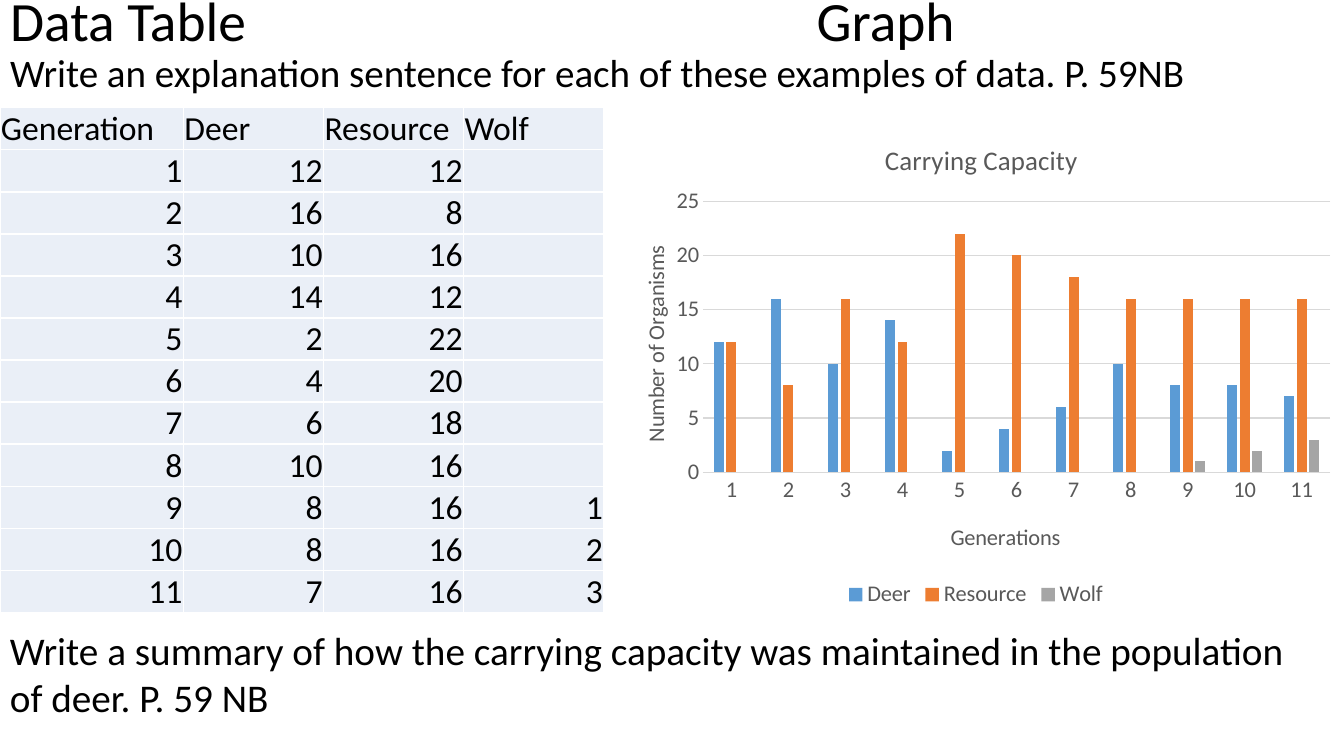
from lxml import etree
from pptx import Presentation
from pptx.chart.data import CategoryChartData
from pptx.dml.color import RGBColor
from pptx.enum.chart import XL_CHART_TYPE, XL_LEGEND_POSITION, XL_TICK_MARK
from pptx.enum.text import MSO_ANCHOR, MSO_AUTO_SIZE, PP_ALIGN
from pptx.oxml.ns import qn
from pptx.util import Inches, Pt

CLUSTERED = XL_CHART_TYPE.COLUMN_CLUSTERED
BOTTOM_LEGEND = XL_LEGEND_POSITION.BOTTOM
NO_TICKS = XL_TICK_MARK.NONE
MIDDLE, BOTTOM = MSO_ANCHOR.MIDDLE, MSO_ANCHOR.BOTTOM
LEFT, RIGHT = PP_ALIGN.LEFT, PP_ALIGN.RIGHT
NO_FIT = MSO_AUTO_SIZE.NONE

FONT = "Calibri"
BLACK, GREY, PALE_GREY, CELL_FILL = "000000", "595959", "D9D9D9", "EAEFF7"

HEADINGS = "Data Table\tGraph"
INSTRUCTION = "Write an explanation sentence for each of these examples of data. P. 59NB"
SUMMARY = ("Write a summary of how the carrying capacity was maintained "
           "in the population of deer. P. 59 NB")
GENERATIONS = [str(number) for number in range(1, 12)]
ORGANISMS = {
    "Deer": ("5B9BD5", [12, 16, 10, 14, 2, 4, 6, 10, 8, 8, 7]),
    "Resource": ("ED7D31", [12, 8, 16, 12, 22, 20, 18, 16, 16, 16, 16]),
    "Wolf": ("A5A5A5", [None] * 8 + [1, 2, 3]),
}
COLUMN_WIDTHS = [1.82, 1.39, 1.39, 1.39]
ROW_HEIGHT = 0.41
CELL_FORMAT = {"margin_left": Inches(0.01), "margin_right": Inches(0.01),
               "margin_top": Inches(0.01), "margin_bottom": 0,
               "vertical_anchor": BOTTOM}
PLOT_LAYOUT = {"layoutTarget": "inner", "xMode": "edge", "yMode": "edge",
               "x": 0.13, "y": 0.18, "w": 0.85, "h": 0.54}


def color(value):
    return RGBColor.from_string(value)


def set_attributes(target, values):
    for name, value in values.items():
        setattr(target, name, value)


def style_font(font, size, value):
    set_attributes(font, {"name": FONT, "size": Pt(size), "bold": False})
    font.color.rgb = color(value)


def add_run(paragraph, text, size):
    run = paragraph.add_run()
    run.text = text
    style_font(run.font, size, BLACK)


def set_layout(element, position, values):
    for previous in element.findall(qn("c:layout")):
        element.remove(previous)
    layout = etree.Element(qn("c:layout"))
    manual = etree.SubElement(layout, qn("c:manualLayout"))
    for name, value in values.items():
        etree.SubElement(manual, qn("c:" + name)).set("val", str(value))
    element.insert(position, layout)


def add_chart_title(owner, text, size, x, y):
    owner.has_title = True
    title = owner.chart_title if hasattr(owner, "chart_title") else owner.axis_title
    title.text_frame.text = text
    style_font(title.text_frame.paragraphs[0].runs[0].font, size, GREY)
    set_layout(title._element, 1, {"xMode": "edge", "yMode": "edge", "x": x, "y": y})


def add_title(slide):
    title = slide.shapes.title
    set_attributes(title, {"left": 0, "top": 0, "width": Inches(13.33), "height": Inches(0.89)})
    set_attributes(title.text_frame, {"word_wrap": True, "auto_size": NO_FIT,
                                      "vertical_anchor": MIDDLE})
    paragraph = title.text_frame.paragraphs[0]
    set_attributes(paragraph, {"alignment": LEFT, "line_spacing": 0.9})
    tab_list = etree.SubElement(paragraph._p.get_or_add_pPr(), qn("a:tabLst"))
    tab_stop = etree.SubElement(tab_list, qn("a:tab"))
    tab_stop.set("pos", str(Inches(8)))
    tab_stop.set("algn", "l")
    add_run(paragraph, HEADINGS, 39.6)
    paragraph.add_line_break()
    add_run(paragraph, INSTRUCTION, 27.9)


def add_data_table(slide):
    columns = [values for _, values in ORGANISMS.values()]
    rows = [("Generation", *ORGANISMS), *zip(GENERATIONS, *columns)]
    table = slide.shapes.add_table(
        len(rows), len(COLUMN_WIDTHS), 0, Inches(1.07),
        Inches(sum(COLUMN_WIDTHS)), Inches(ROW_HEIGHT * len(rows))).table
    set_attributes(table, {"first_row": False, "horz_banding": False})
    for column, width in zip(table.columns, COLUMN_WIDTHS):
        column.width = Inches(width)
    for row_index, row in enumerate(rows):
        for column_index, value in enumerate(row):
            cell = table.cell(row_index, column_index)
            set_attributes(cell, CELL_FORMAT)
            cell.fill.solid()
            cell.fill.fore_color.rgb = color(CELL_FILL)
            if value is not None:
                paragraph = cell.text_frame.paragraphs[0]
                paragraph.alignment = RIGHT if row_index else LEFT
                add_run(paragraph, str(value), 24)


def add_capacity_chart(slide):
    data = CategoryChartData()
    data.categories = GENERATIONS
    for name, (_, values) in ORGANISMS.items():
        data.add_series(name, values)
    chart = slide.shapes.add_chart(
        CLUSTERED, Inches(6.02), Inches(1.1), Inches(7.32), Inches(4.98), data).chart
    style_font(chart.font, 16, BLACK)
    add_chart_title(chart, "Carrying Capacity", 19.2, 0.37, 0.05)
    add_chart_title(chart.category_axis, "Generations", 16, 0.46, 0.81)
    add_chart_title(chart.value_axis, "Number of Organisms", 16, 0.04, 0.26)

    plot = chart.plots[0]
    set_attributes(plot, {"gap_width": 219, "overlap": -27, "vary_by_categories": False})
    for series, (fill, _) in zip(plot.series, ORGANISMS.values()):
        series.format.fill.solid()
        series.format.fill.fore_color.rgb = color(fill)

    for axis in (chart.category_axis, chart.value_axis):
        set_attributes(axis, {"major_tick_mark": NO_TICKS, "minor_tick_mark": NO_TICKS})
        style_font(axis.tick_labels.font, 16, GREY)
    set_attributes(chart.value_axis, {"minimum_scale": 0, "maximum_scale": 25, "major_unit": 5})
    chart.value_axis.format.line.fill.background()
    for line in (chart.category_axis.format.line, chart.value_axis.major_gridlines.format.line):
        line.color.rgb = color(PALE_GREY)
        line.width = Pt(0.75)

    chart.has_legend = True
    set_attributes(chart.legend, {"position": BOTTOM_LEGEND, "include_in_layout": False})
    style_font(chart.legend.font, 16, GREY)
    set_layout(chart._chartSpace.find(".//" + qn("c:plotArea")), 0, PLOT_LAYOUT)


def add_summary(slide):
    box = slide.shapes.add_textbox(0, Inches(6.16), Inches(12.98), Inches(1.04))
    box.text_frame.word_wrap = True
    add_run(box.text_frame.paragraphs[0], SUMMARY, 28)


def main():
    presentation = Presentation()
    presentation.slide_width, presentation.slide_height = Inches(13.33), Inches(7.5)
    slide = presentation.slides.add_slide(presentation.slide_layouts[5])
    add_title(slide)
    add_data_table(slide)
    add_capacity_chart(slide)
    add_summary(slide)
    presentation.save("out.pptx")


if __name__ == "__main__":
    main()
